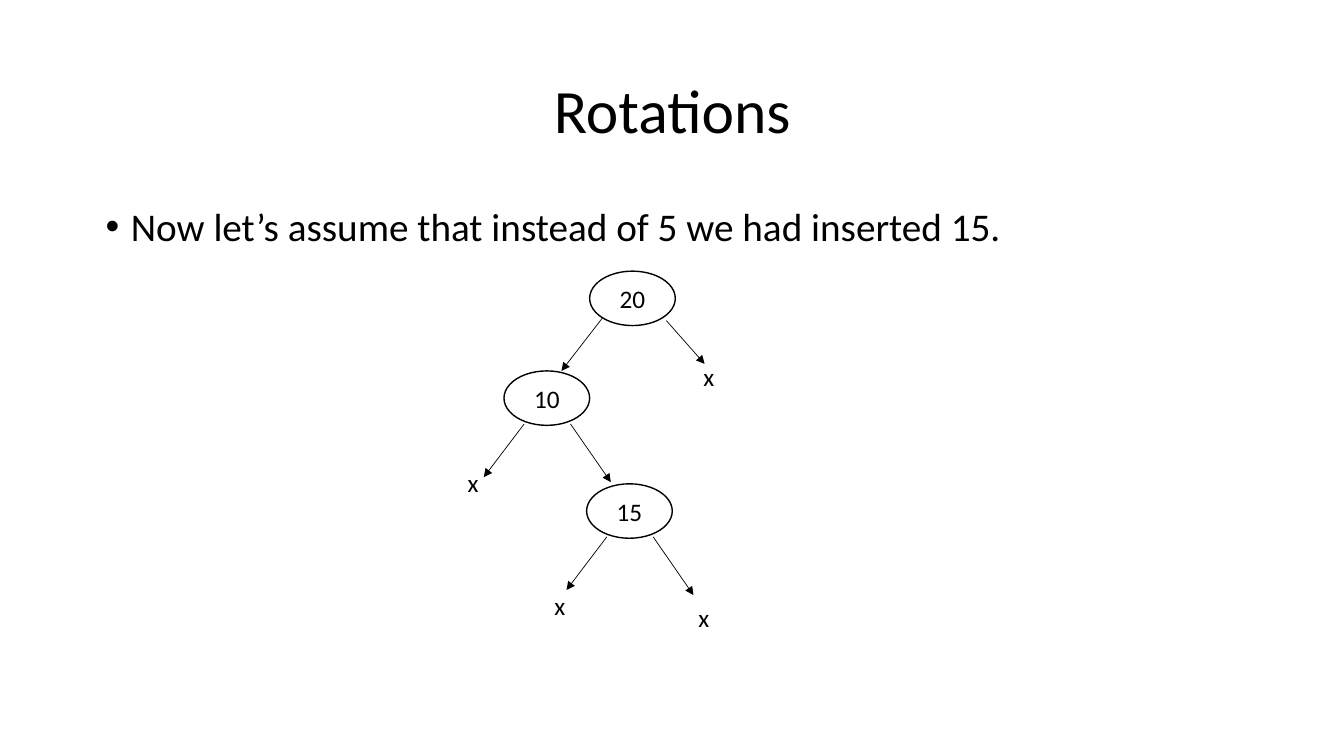
from lxml.etree import SubElement
from pptx import Presentation
from pptx.dml.color import RGBColor
from pptx.enum.shapes import MSO_CONNECTOR as CONN, MSO_SHAPE as SHAPE
from pptx.enum.text import MSO_ANCHOR as ANCHOR, PP_ALIGN as ALIGN
from pptx.oxml.ns import qn
from pptx.util import Inches, Pt

COLS, ROWS = 40, 22.5
NODE_W, NODE_H = 2.55, 1.62
LOWER_ARROWS = [(0.6, 1.58, -1.2, 1.58), (1.98, 1.58, 1.2, 1.73)]
ROOT_ARROWS = [(0.39, 1.38, -1.23, 1.59), (2.28, 1.47, 1.14, 1.29)]
NODES = [
    ("20", 17.55, 8.07, ROOT_ARROWS),
    ("10", 15, 11.04, LOWER_ARROWS),
    ("15", 17.46, 14.4, LOWER_ARROWS),
]
EMPTY_LEAVES = [(20.64, 10.62), (13.62, 13.77), (16.2, 17.43), (20.49, 17.79)]


def rgb(value):
    """Turn a hex string into a colour."""
    return RGBColor.from_string(value)


def write(tf, text, size=18, font="Calibri", color="000000", align=ALIGN.LEFT,
          anchor=ANCHOR.TOP, wrap=True, spacing=None, before=None, bullet=None):
    """Put one formatted paragraph into a text frame."""
    tf.word_wrap, tf.vertical_anchor = wrap, anchor
    p = tf.paragraphs[0]
    p.alignment, p.line_spacing = align, spacing
    if before is not None:
        p.space_before = Pt(before)
    if bullet:
        pPr = p._p.get_or_add_pPr()
        pPr.set("marL", str(Inches(0.25)))
        pPr.set("indent", str(-Inches(0.25)))
        SubElement(pPr, qn("a:buFont"), typeface="Arial")
        SubElement(pPr, qn("a:buChar"), char=bullet)
    r = p.add_run()
    r.text = text
    r.font.size, r.font.name = Pt(size), font
    r.font.color.rgb = rgb(color)


class TreeSlide:
    """Draw tree elements on a slide, measured in grid columns and rows."""

    def __init__(self, prs, ink="000000", paper="FFFFFF"):
        """Add a title-only slide and keep its style."""
        self.s = prs.slides.add_slide(prs.slide_layouts[5])
        self.col, self.row = prs.slide_width / COLS, prs.slide_height / ROWS
        self.ink, self.paper = ink, paper

    def box(self, x, y, w, h):
        """Convert grid units to slide lengths."""
        return (round(x * self.col), round(y * self.row),
                round(w * self.col), round(h * self.row))

    def title(self, text, *place):
        """Move and fill the title placeholder."""
        sp = self.s.shapes.title
        sp.left, sp.top, sp.width, sp.height = self.box(*place)
        write(sp.text_frame, text, size=44, color=self.ink, align=ALIGN.CENTER,
              anchor=ANCHOR.MIDDLE, spacing=0.9)

    def text(self, text, *place, **style):
        """Add a text box."""
        sp = self.s.shapes.add_textbox(*self.box(*place))
        write(sp.text_frame, text, color=self.ink, **style)

    def node(self, label, x, y):
        """Add an outlined oval with its key."""
        sp = self.s.shapes.add_shape(SHAPE.OVAL, *self.box(x, y, NODE_W, NODE_H))
        sp.shadow.inherit = False
        sp.fill.solid()
        sp.fill.fore_color.rgb = rgb(self.paper)
        sp.line.color.rgb, sp.line.width = rgb(self.ink), Pt(1)
        write(sp.text_frame, label, color=self.ink, align=ALIGN.CENTER,
              anchor=ANCHOR.MIDDLE)

    def arrow(self, x, y, dx, dy):
        """Add an arrow from a point along an offset."""
        ends = self.box(x, y, x + dx, y + dy)
        sp = self.s.shapes.add_connector(CONN.STRAIGHT, *ends)
        sp.line.color.rgb, sp.line.width = rgb(self.ink), Pt(0.5)
        SubElement(sp.line._get_or_add_ln(), qn("a:tailEnd"), type="triangle")
        SubElement(sp._element.spPr, qn("a:effectLst"))


def main():
    """Build the rotations slide."""
    prs = Presentation()
    prs.slide_width, prs.slide_height = Inches(13.33), Inches(7.5)
    slide = TreeSlide(prs)
    slide.title("Rotations", 2.76, 1.2, 34.5, 4.35)
    slide.text("Now let’s assume that instead of 5 we had inserted 15.",
               2.85, 6.03, 34.5, 14.28, size=28, spacing=0.9, before=10, bullet="•")
    for label, x, y, arrows in NODES:
        slide.node(label, x, y)
        for left, top, dx, dy in arrows:
            slide.arrow(x + left, y + top, dx, dy)
    for x, y in EMPTY_LEAVES:
        slide.text("x", x, y, 0.93, 1.2, wrap=False)
    prs.save("out.pptx")


if __name__ == "__main__":
    main()
